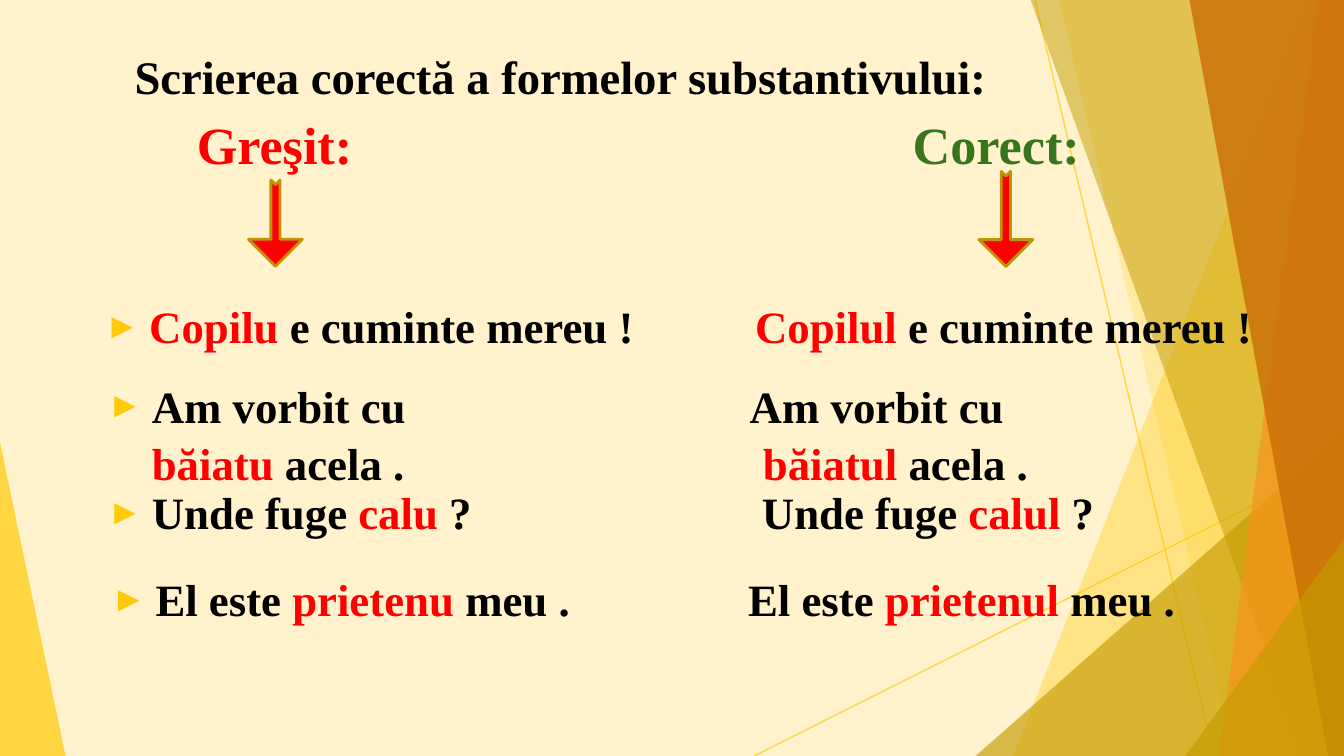
from pptx import Presentation
from pptx.dml.color import RGBColor
from pptx.enum.shapes import MSO_CONNECTOR as Connector, MSO_SHAPE as Shape
from pptx.enum.text import MSO_ANCHOR as Anchor, MSO_AUTO_SIZE as AutoSize, PP_ALIGN as Align
from pptx.oxml.ns import qn
from pptx.util import Cm, Pt
from lxml.etree import SubElement

COLORS = {
    "cream": "FFF2CC", "yellow": "FFCA08", "gold": "C59B00", "outline": "BC9404",
    "orange": "F8931D", "rust": "CA6F06", "red": "FF0000", "green": "38761D", "black": "000000",
}
FONT = "Times New Roman"
WIDTH, HEIGHT = 25.4, 14.29


def set_alpha(shape, percent):
    for color in shape._element.spPr.iter(qn("a:srgbClr")):
        SubElement(color, qn("a:alpha"), val=str(percent * 1000))


def write_text(box, lines, size, accent="red"):
    frame = box.text_frame
    frame.word_wrap = True
    frame.auto_size = AutoSize.NONE
    frame.vertical_anchor = Anchor.TOP
    for index, line in enumerate(lines):
        para = frame.paragraphs[0] if index == 0 else frame.add_paragraph()
        para.alignment = Align.LEFT
        para.line_spacing = 1.07
        for part, text in enumerate(line.split("*")):
            if text:
                span = para.add_run()
                span.text = text
                span.font.name = FONT
                span.font.size = Pt(size)
                span.font.bold = True
                span.font.color.rgb = RGBColor.from_string(COLORS[accent if part % 2 else "black"])


deck = Presentation()
deck.slide_width, deck.slide_height = Cm(WIDTH), Cm(HEIGHT)
page = deck.slides.add_slide(deck.slide_layouts[5])
page.background.fill.solid()
page.background.fill.fore_color.rgb = RGBColor.from_string(COLORS["cream"])

for x1, y1, x2, y2 in [(14.25, HEIGHT, WIDTH, 8.69), (19.56, 0, 22.94, HEIGHT)]:
    ray = page.shapes.add_connector(Connector.STRAIGHT, Cm(x1), Cm(y1), Cm(x2), Cm(y2))
    ray.line.color.rgb = RGBColor.from_string(COLORS["yellow"])
    ray.line.width = Pt(0.75)
    set_alpha(ray, 70)
    SubElement(ray._element.spPr, qn("a:effectLst"))

bottom_right, top_right = (WIDTH, HEIGHT), (WIDTH, 0)
facets = [
    ("yellow", 70, [(0, 8.36), (1.24, HEIGHT), (0, HEIGHT)]),
    ("yellow", 36, [(24.77, 0), (19.15, HEIGHT), bottom_right, top_right]),
    ("yellow", 20, [(20.02, 0), (23.34, HEIGHT), bottom_right, top_right]),
    ("gold", 65, [(18.44, HEIGHT), (WIDTH, 8.15), bottom_right]),
    ("gold", 50, [(19.48, 0), (24.64, HEIGHT), bottom_right, top_right]),
    ("orange", 70, [(24.92, 0), (23.04, HEIGHT), bottom_right, top_right]),
    ("rust", 82, [(22.48, 0), (25.1, HEIGHT), bottom_right, top_right]),
    ("gold", 65, [(22.4, HEIGHT), (WIDTH, 10.19), bottom_right]),
]
for color, opacity, corners in facets:
    points = [(Cm(x), Cm(y)) for x, y in corners]
    builder = page.shapes.build_freeform(*points[0])
    builder.add_line_segments(points[1:], close=True)
    facet = builder.convert_to_shape()
    facet.shadow.inherit = False
    facet.fill.solid()
    facet.fill.fore_color.rgb = RGBColor.from_string(COLORS[color])
    facet.line.fill.background()
    set_alpha(facet, opacity)

title = page.shapes.title
title.left, title.top, title.width, title.height = Cm(2.29), Cm(0.71), Cm(21.2), Cm(0.84)
write_text(title, ["Scrierea corectă a formelor substantivului:"], 25)

for left, text, color in [(3.47, "*Greşit:*", "red"), (17, "*Corect:*", "green")]:
    heading = page.shapes.add_textbox(Cm(left), Cm(1.92), Cm(6), Cm(1.35))
    write_text(heading, [text], 28, color)

for left, top, length in [(18.11, 3.63, 1.8), (4.39, 3.71, 1.63)]:
    arrow = page.shapes.add_shape(Shape.NOTCHED_RIGHT_ARROW, Cm(left), Cm(top), Cm(length), Cm(1.02))
    arrow.rotation = 90
    arrow.adjustments[0] = 0.17
    arrow.shadow.inherit = False
    arrow.fill.solid()
    arrow.fill.fore_color.rgb = RGBColor.from_string(COLORS["red"])
    arrow.line.color.rgb = RGBColor.from_string(COLORS["outline"])
    arrow.line.width = Pt(1.5)

examples = [
    (5.46, 1.73, ["*Copilu* e cuminte mereu !"], 14.02, ["*Copilul* e cuminte mereu !"]),
    (6.96, 1.78, ["Am vorbit cu", "*băiatu* acela ."], 13.92, ["Am vorbit cu", "*băiatul* acela ."]),
    (8.97, 1.78, ["Unde fuge *calu* ?"], 14.15, ["Unde fuge *calul* ?"]),
    (10.62, 1.85, ["El este *prietenu* meu ."], 13.89, ["El este *prietenul* meu ."]),
]
for top, wrong_left, wrong, right_left, right in examples:
    for left, width, lines in [(wrong_left, 11.9, wrong), (right_left, 11, right)]:
        box = page.shapes.add_textbox(Cm(left), Cm(top), Cm(width), Cm(len(lines)))
        write_text(box, lines, 24)
        first, *others = box.text_frame.paragraphs
        if lines is wrong:
            for para in box.text_frame.paragraphs:
                para._p.get_or_add_pPr().set("marL", str(Cm(0.84)))
            props = first._p.get_or_add_pPr()
            props.set("indent", str(-Cm(0.84)))
            SubElement(SubElement(props, qn("a:buClr")), qn("a:srgbClr"), val=COLORS["yellow"])
            SubElement(props, qn("a:buSzPct"), val="80000")
            SubElement(props, qn("a:buFont"), typeface="Arial")
            SubElement(props, qn("a:buChar"), char="►")
        else:
            for para in others:
                para._p.get_or_add_pPr().set("marL", str(Cm(0.25)))

deck.save("out.pptx")
